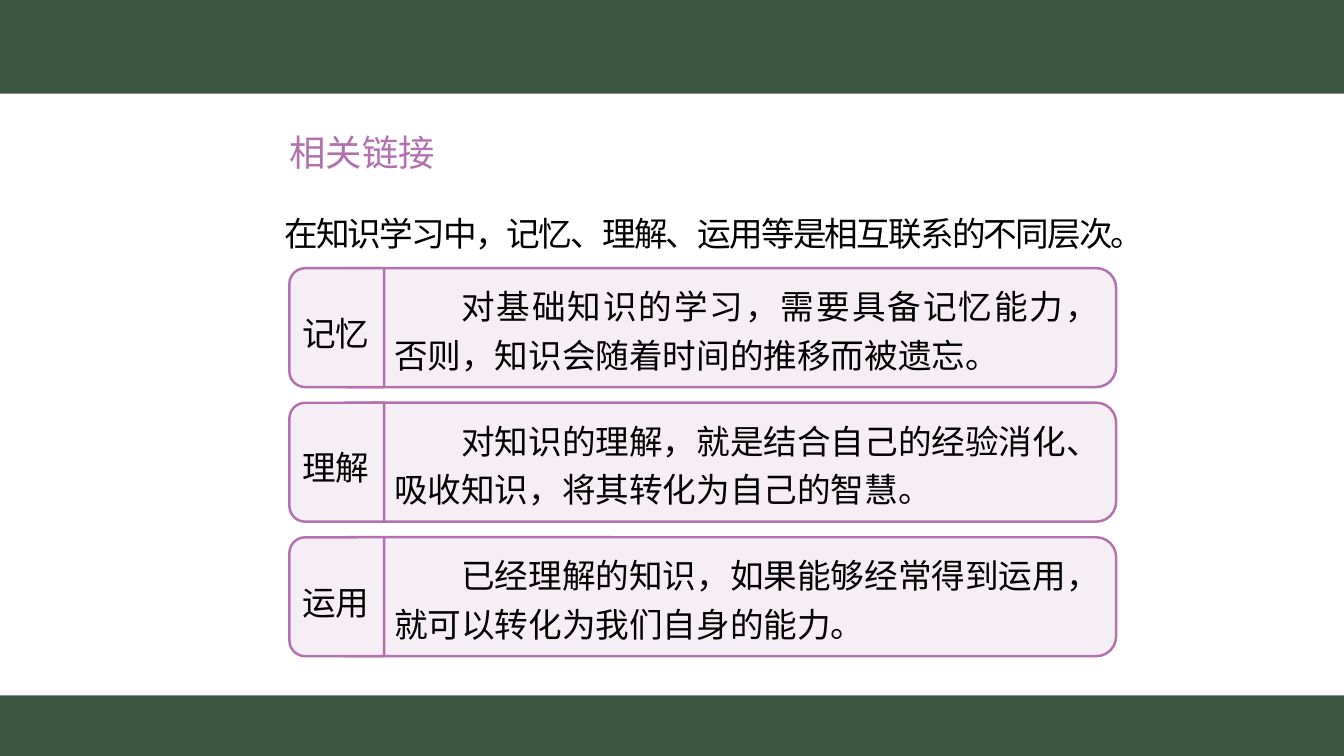
from pptx import Presentation
from pptx.dml.color import RGBColor
from pptx.enum.shapes import MSO_SHAPE
from pptx.enum.text import MSO_ANCHOR, MSO_AUTO_SIZE, PP_ALIGN
from pptx.oxml.ns import qn
from pptx.util import Inches, Pt
from lxml.etree import SubElement

GREEN = RGBColor(0x3B, 0x56, 0x43)
PURPLE = RGBColor(0xB3, 0x71, 0xAF)
PALE = RGBColor(0xF5, 0xEE, 0xF5)
BLACK = RGBColor(0, 0, 0)
SANS = "Noto Sans CJK SC"
SERIF = "Times New Roman"

WIDTH, HEIGHT = 13.33, 7.5
CARD_LEFT, CARD_TOP, CARD_W, CARD_H = 3.24, 2.66, 7.83, 1.18
PITCH = 1.335
TAB_LEFT, TAB_W = 2.87, 0.94
INDENT = Pt(48)


def add_panel(kind, left, top, width, height, fill, line=None):
    sp = s.shapes.add_shape(kind, Inches(left), Inches(top), Inches(width), Inches(height))
    sp.shadow.inherit = False
    sp.fill.solid()
    sp.fill.fore_color.rgb = fill
    if line is None:
        sp.line.fill.background()
    else:
        sp.line.color.rgb = line
        sp.line.width = Pt(1.75)
    return sp


def write(sp, box, lines, size=24, color=BLACK, font=SANS, leading=1.2, wrap=True):
    sp.left, sp.top, sp.width, sp.height = [Inches(v) for v in box]
    tf = sp.text_frame
    tf.word_wrap = wrap
    tf.auto_size = MSO_AUTO_SIZE.NONE
    tf.vertical_anchor = MSO_ANCHOR.TOP
    tf.text = "\n".join(text for text, _, _ in lines)
    for p, (_, indent, spacing) in zip(tf.paragraphs, lines):
        p.alignment = PP_ALIGN.LEFT
        p.line_spacing = leading
        p.space_before = Pt(0)
        pPr = p._p.get_or_add_pPr()
        pPr.set("marL", "0")
        pPr.set("indent", str(indent))
        SubElement(pPr, qn("a:buNone"))
        r = p.runs[0]
        r.font.size = Pt(size)
        r.font.color.rgb = color
        r.font.name = font
        rPr = r._r.get_or_add_rPr()
        rPr.set("spc", str(round(spacing * 100)))
        SubElement(rPr, qn("a:ea")).set("typeface", SANS)


prs = Presentation()
prs.slide_width, prs.slide_height = Inches(WIDTH), Inches(HEIGHT)
s = prs.slides.add_slide(prs.slide_layouts[1])

for top, height in [(0, 0.93), (6.9, 0.6)]:
    add_panel(MSO_SHAPE.RECTANGLE, 0, top, WIDTH, height, GREEN)

title, body = s.placeholders
write(title, (2.77, 0.98, 9.14, 0.84), [("相关链接", 0, 0)], 26, PURPLE, leading=1.6)
write(body, (2.72, 1.82, 9.19, 0.75),
      [("在知识学习中，记忆、理解、运用等是相互联系的不同层次。", 0, -1.3)], leading=1.6)

cards = [
    ("记忆", 7.32, [("对基础知识的学习，需要具备记忆能力，", INDENT, 1.4),
                  ("否则，知识会随着时间的推移而被遗忘。", 0, 0)]),
    ("理解", 7.14, [("对知识的理解，就是结合自己的经验消化、吸收知识，将其转化为自己的智慧。", INDENT, 0)]),
    ("运用", 7.14, [("已经理解的知识，如果能够经常得到运用，就可以转化为我们自身的能力。", INDENT, 0)]),
]
for i, (label, text_w, lines) in enumerate(cards):
    top = CARD_TOP + i * PITCH
    add_panel(MSO_SHAPE.ROUNDED_RECTANGLE, CARD_LEFT, top, CARD_W, CARD_H, PALE, PURPLE)
    turn = (CARD_H - TAB_W) / 2
    tab = add_panel(MSO_SHAPE.ROUND_2_SAME_RECTANGLE, TAB_LEFT - turn, top + turn,
                    CARD_H, TAB_W, PALE, PURPLE)
    tab.rotation = 270
    write(s.shapes.add_textbox(0, 0, 0, 0), (2.9, top + 0.31, 0.88, 0.55),
          [(label, 0, 0)], font=SERIF, wrap=False)
    write(s.shapes.add_textbox(0, 0, 0, 0), (3.81, top + 0.05, text_w, 1.04), lines)

prs.save("out.pptx")
